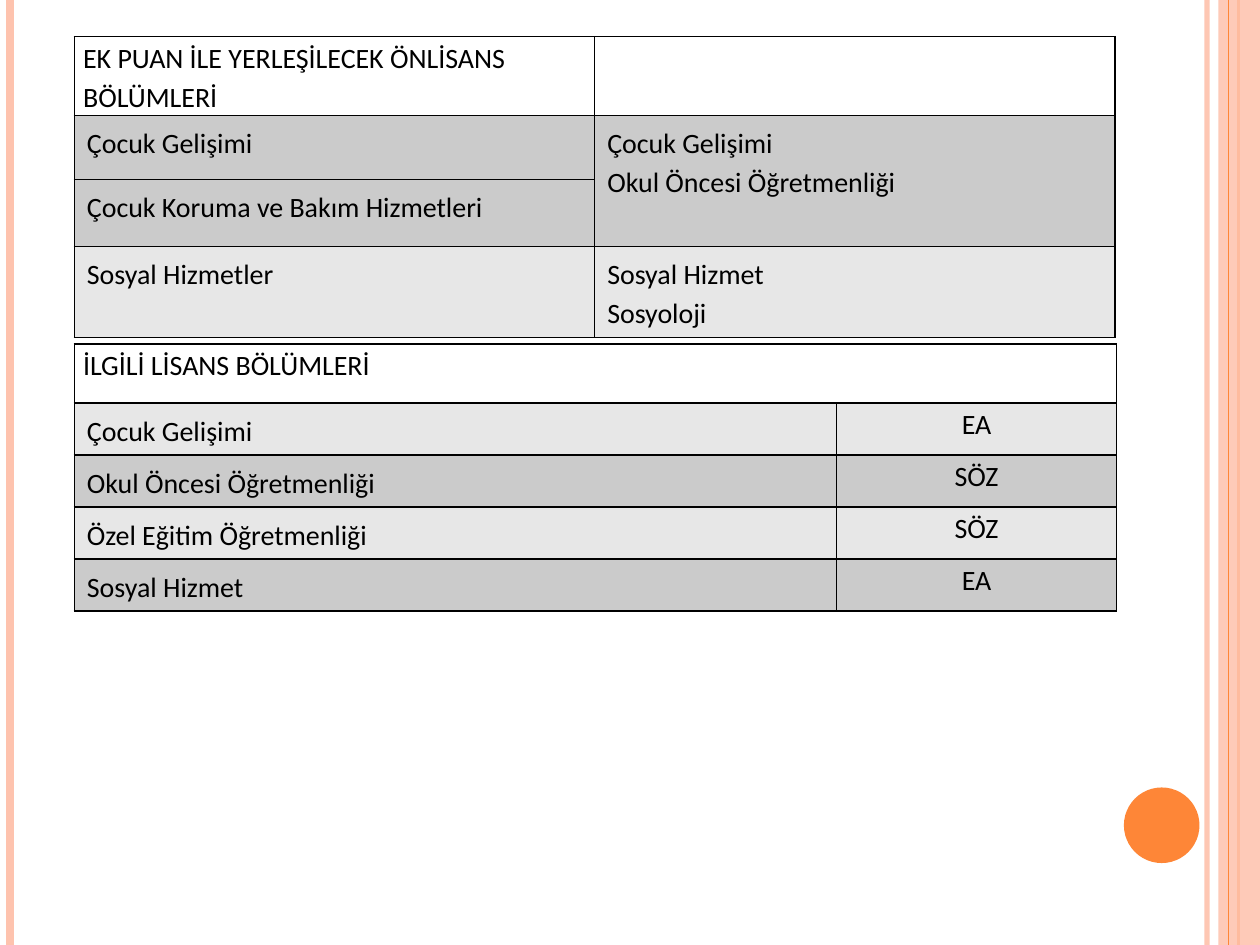
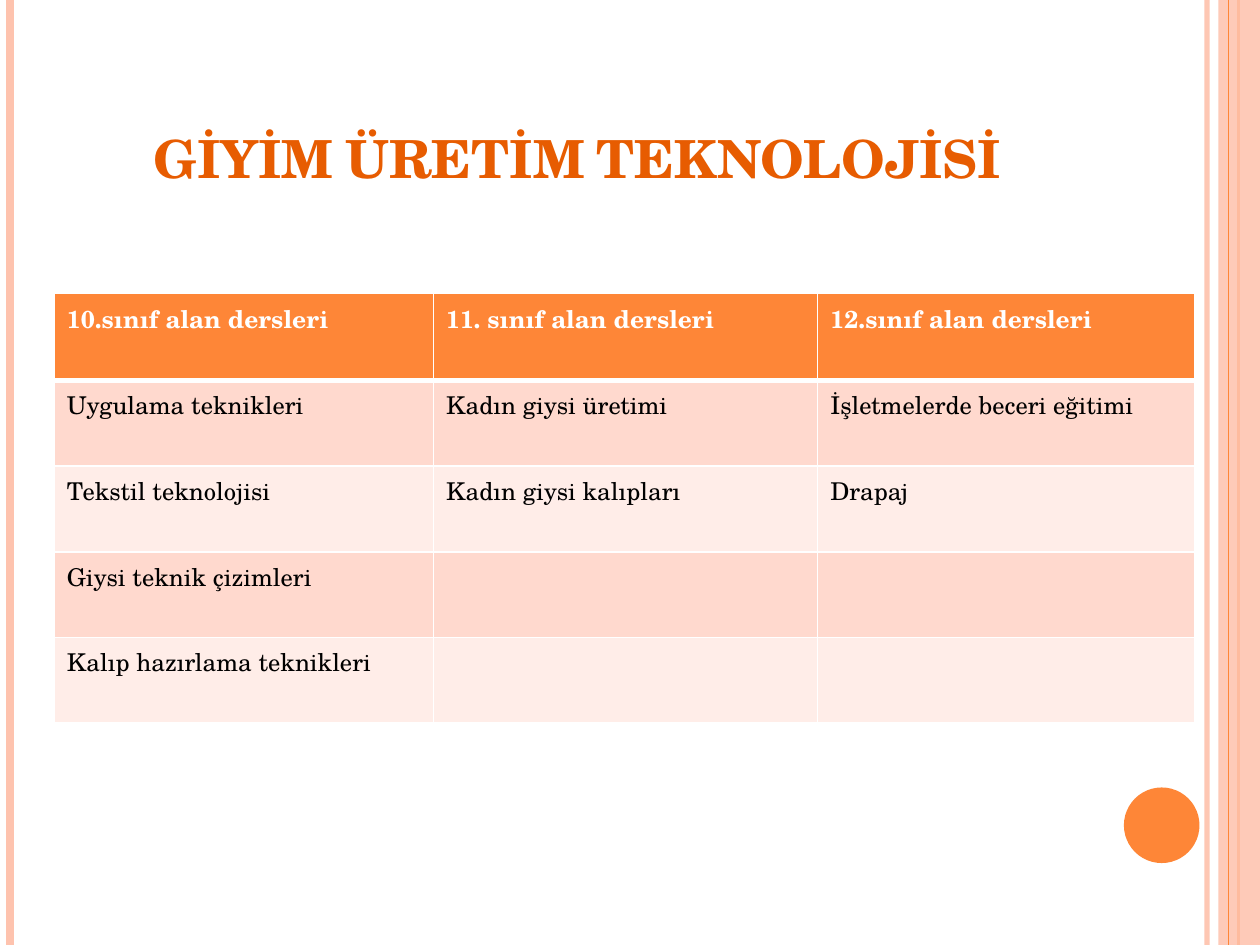
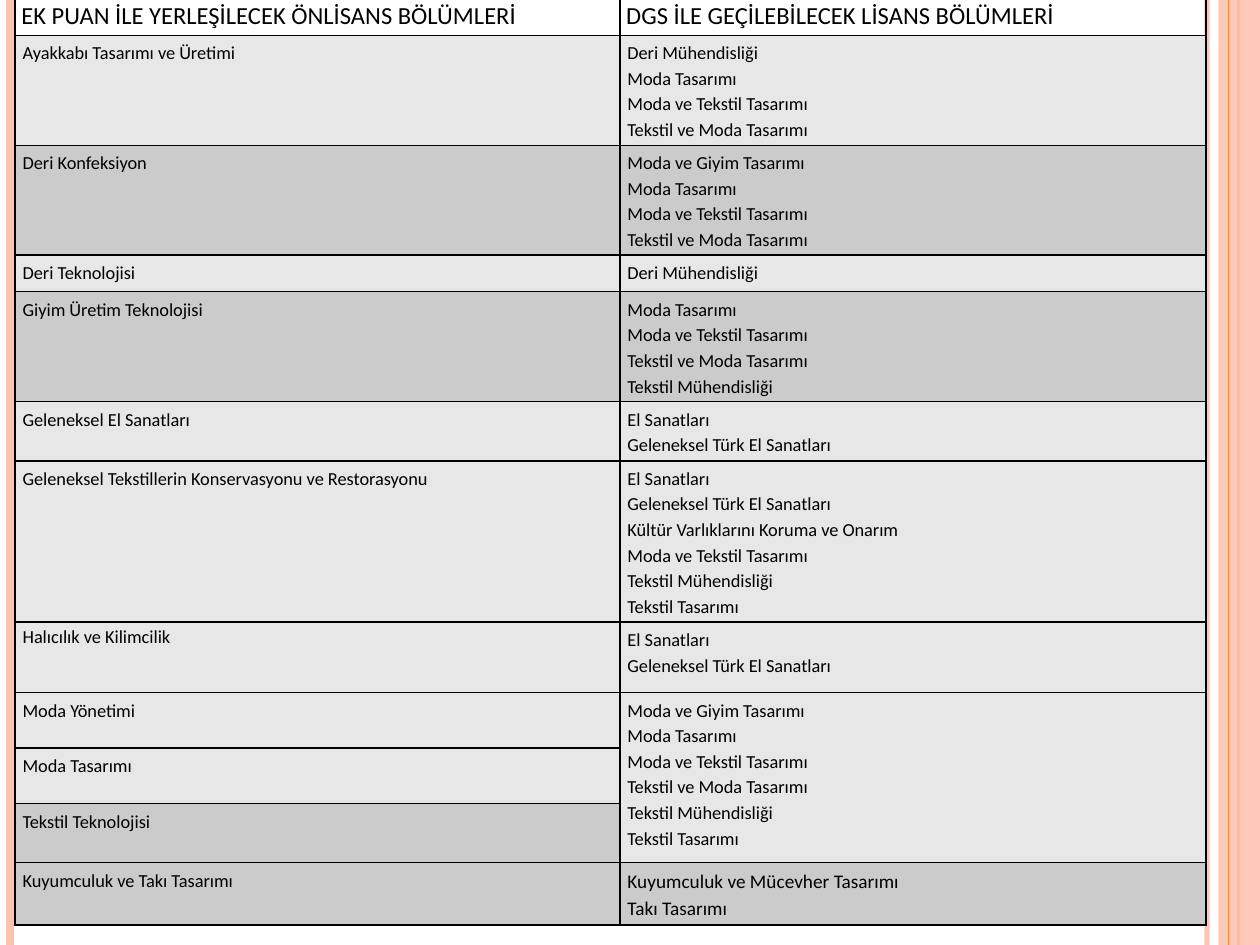
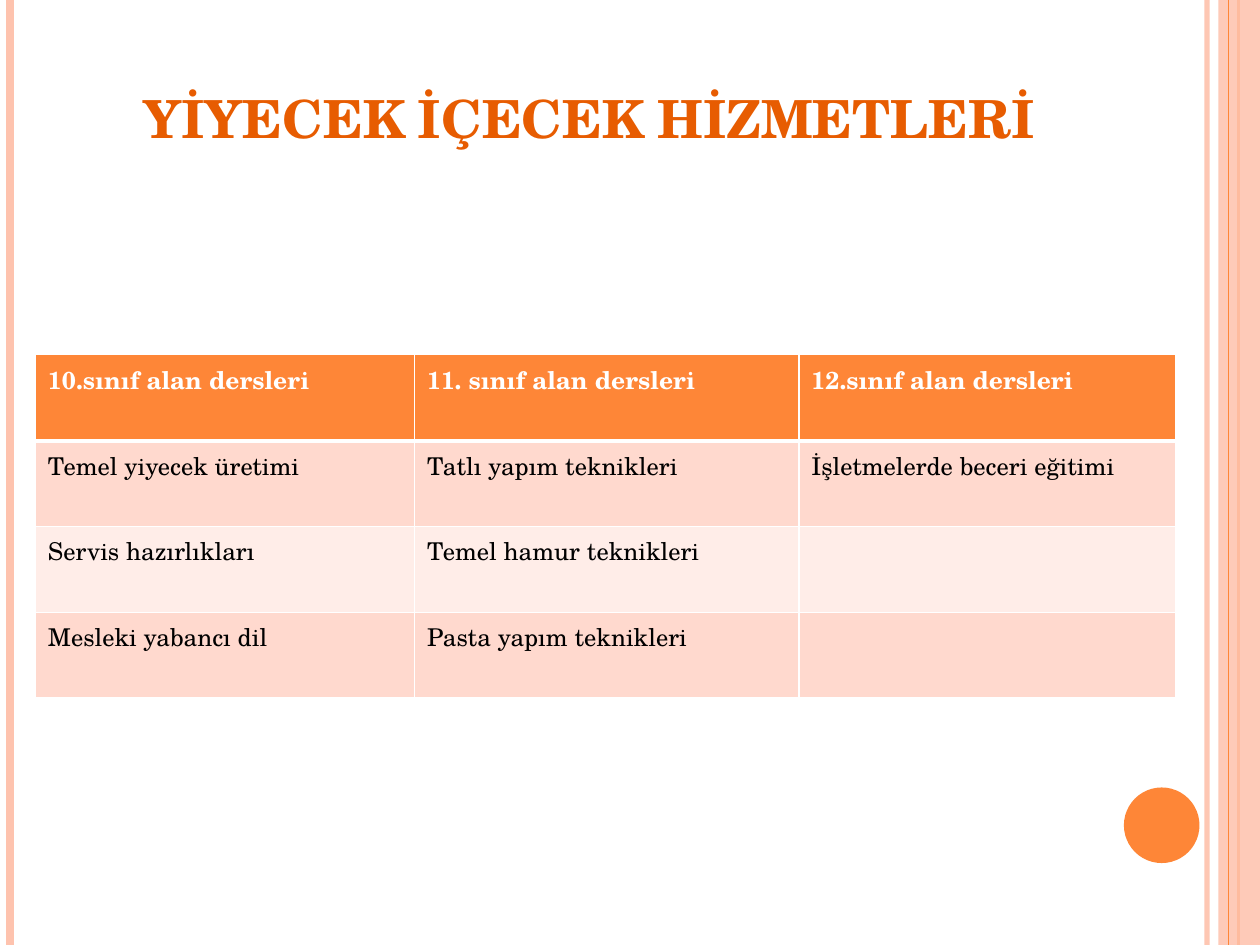
from lxml.etree import SubElement
from pptx import Presentation
from pptx.dml.color import RGBColor
from pptx.enum.shapes import MSO_CONNECTOR, MSO_SHAPE
from pptx.enum.text import MSO_ANCHOR, PP_ALIGN
from pptx.oxml.ns import qn
from pptx.util import Inches, Pt

INK = {
    "peach": "FEC3AE", "orange": "FE8637", "title": "E75C01",
    "black": "000000", "white": "FFFFFF", "dark": "CBCBCB",
    "light": "E7E7E7", "rose": "FFD9CE", "pale": "FFEDE8",
}
RGB = {name: RGBColor.from_string(code) for name, code in INK.items()}
SERIF, SANS = "TeX Gyre Schola", "Calibri"


def border(cell, sides, color, width):
    """Draw the named sides (L, R, T, B) of a cell, ahead of its fill."""
    props = cell._tc.get_or_add_tcPr()
    for spot, side in enumerate(sides):
        for old in props.findall(qn(f"a:ln{side}")):
            props.remove(old)
        line = SubElement(props, qn(f"a:ln{side}"), w=str(Pt(width)))
        solid = SubElement(line, qn("a:solidFill"))
        SubElement(solid, qn("a:srgbClr"), val=INK[color])
        props.insert(spot if len(sides) > 1 else "LRTB".index(side), line)


def grid(slide, left, top, cols, rows, texts, fills, font, size, edge, gap):
    """Add a table; a fill of None leaves the row clear."""
    frame = slide.shapes.add_table(
        len(rows), len(cols), Inches(left), Inches(top),
        Inches(sum(cols)), Inches(sum(rows)))
    table = frame.table
    table.first_row = table.horz_banding = False
    for col, width in zip(table.columns, cols):
        col.width = Inches(width)
    for row, height, line, fill in zip(table.rows, rows, texts, fills):
        row.height = Inches(height)
        for cell, text in zip(row.cells, line):
            if fill:
                cell.fill.solid()
                cell.fill.fore_color.rgb = RGB[fill]
            else:
                cell.fill.background()
            border(cell, "LRTB", edge, 1)
            cell.text_frame.text = text
            for para in cell.text_frame.paragraphs:
                para.line_spacing = gap
                for run in para.runs:
                    run.font.name = font
                    run.font.size = Pt(size)
                    run.font.color.rgb = RGB["black"]
    return table


deck = Presentation()
deck.slide_width, deck.slide_height = Inches(10), Inches(7.5)
slides = [deck.slides.add_slide(deck.slide_layouts[6]) for _ in range(4)]

# Shared side bands and corner disc
RULES = [(9.58, "peach", 3), (0.08, "peach", 4.5),
         (9.83, "orange", 1.5), (9.75, "orange", 0.75)]
SHAPES = [(MSO_SHAPE.RECTANGLE, 9.67, 0, 0.33, 7.5, "peach"),
          (MSO_SHAPE.OVAL, 8.92, 6.25, 0.6, 0.6, "orange")]
for slide in slides:
    rules, forms = [], []
    for x, color, width in RULES:
        rule = slide.shapes.add_connector(
            MSO_CONNECTOR.STRAIGHT, Inches(x), 0, Inches(x), Inches(7.5))
        rule.line.color.rgb = RGB[color]
        rule.line.width = Pt(width)
        SubElement(rule._element.spPr, qn("a:effectLst"))
        rules.append(rule)
    for kind, *box, color in SHAPES:
        form = slide.shapes.add_shape(kind, *map(Inches, box))
        form.shadow.inherit = False
        form.fill.solid()
        form.fill.fore_color.rgb = RGB[color]
        form.line.fill.background()
        forms.append(form)
    # The finest rule lies over the band
    forms[0]._element.addnext(rules[3]._element)
    for form, alpha in ((rules[0], 93), (forms[0], 87)):
        tone = next(form._element.spPr.iter(qn("a:srgbClr")))
        SubElement(tone, qn("a:alpha"), val=str(alpha * 1000))

# Slide 1: child development, associate and bachelor programmes
top = grid(
    slides[0], 0.59, 0.29, [4.13, 4.13], [0.62, 0.51, 0.53, 0.72],
    [("EK PUAN İLE YERLEŞİLECEK ÖNLİSANS BÖLÜMLERİ", ""),
     ("Çocuk Gelişimi", "Çocuk Gelişimi\nOkul Öncesi Öğretmenliği"),
     ("Çocuk Koruma ve Bakım Hizmetleri", ""),
     ("Sosyal Hizmetler", "Sosyal Hizmet\nSosyoloji")],
    [None, "dark", "dark", "light"], SANS, 16, "black", 1.15)
top.cell(1, 1).merge(top.cell(2, 1))

low = grid(
    slides[0], 0.59, 2.73, [6.05, 2.22], [0.47] + [0.41] * 4,
    [("İLGİLİ LİSANS BÖLÜMLERİ", ""),
     ("Çocuk Gelişimi", "EA"),
     ("Okul Öncesi Öğretmenliği", "SÖZ"),
     ("Özel Eğitim Öğretmenliği", "SÖZ"),
     ("Sosyal Hizmet", "EA")],
    [None] + ["light", "dark"] * 2, SANS, 16, "black", 1.15)
low.cell(0, 0).merge(low.cell(0, 1))
for table in (top, low):
    head = table.cell(0, 0)
    head.margin_left = head.margin_right = Inches(0.07)
    head.margin_top = head.margin_bottom = 0
for r in range(1, 5):
    cell = low.cell(r, 1)
    cell.margin_left = cell.margin_right = 0
    cell.margin_top = cell.margin_bottom = 0
    cell.text_frame.paragraphs[0].alignment = PP_ALIGN.CENTER

# Slides 2 and 4: title over the lessons of three school years
YEARS = ("10.sınıf alan dersleri", "11. sınıf alan dersleri",
         "12.sınıf alan dersleri")
LESSONS = [
    (slides[1], "GİYİM ÜRETİM TEKNOLOJİSİ", (0.5, 0.3, 8.17, 1.25), 0.43, 2.33,
     [("Uygulama teknikleri", "Kadın giysi üretimi",
       "İşletmelerde beceri eğitimi"),
      ("Tekstil teknolojisi", "Kadın giysi kalıpları", "Drapaj"),
      ("Giysi teknik çizimleri", "", ""),
      ("Kalıp hazırlama teknikleri", "", "")]),
    (slides[3], "YİYECEK İÇECEK HİZMETLERİ", (0.59, 0.21, 8.17, 1.02), 0.28, 2.81,
     [("Temel yiyecek üretimi", "Tatlı yapım teknikleri",
       "İşletmelerde beceri eğitimi"),
      ("Servis hazırlıkları", "Temel hamur teknikleri", ""),
      ("Mesleki yabancı dil", "Pasta yapım teknikleri", "")]),
]
for slide, name, box, x, y, rows in LESSONS:
    frame = slide.shapes.add_textbox(*map(Inches, box)).text_frame
    frame.word_wrap = True
    frame.vertical_anchor = MSO_ANCHOR.BOTTOM
    frame.text = name
    para = frame.paragraphs[0]
    para.alignment = PP_ALIGN.CENTER
    font = para.runs[0].font
    font.name, font.size, font.bold = SERIF, Pt(30), True
    font.color.rgb = RGB["title"]
    font._element.set("cap", "small")

    count = len(rows)
    table = grid(
        slide, x, y, [3.01, 3.05, 2.99], [0.69] + [0.68] * count,
        [YEARS] + rows, ["orange"] + (["rose", "pale"] * 2)[:count],
        SERIF, 14, "white", 1)
    for c in range(3):
        head = table.cell(0, c)
        font = head.text_frame.paragraphs[0].runs[0].font
        font.bold = True
        font.color.rgb = RGB["white"]
        border(head, "B", "white", 3)
        border(table.cell(1, c), "T", "white", 3)

# Slide 3: clothing, associate programmes and transfer options
FASHION = "Moda Tasarımı\nModa ve Tekstil Tasarımı\nTekstil ve Moda Tasarımı"
CRAFT = "El Sanatları\nGeleneksel Türk El Sanatları"
MILL = "Tekstil Mühendisliği"
PATHS = [
    ("EK PUAN İLE YERLEŞİLECEK ÖNLİSANS BÖLÜMLERİ",
     "DGS İLE GEÇİLEBİLECEK LİSANS BÖLÜMLERİ", 0.31, None),
    ("Ayakkabı Tasarımı ve Üretimi", f"Deri Mühendisliği\n{FASHION}",
     0.87, "light"),
    ("Deri Konfeksiyon", f"Moda ve Giyim Tasarımı\n{FASHION}", 0.87, "dark"),
    ("Deri Teknolojisi", "Deri Mühendisliği", 0.29, "light"),
    ("Giyim Üretim Teknolojisi", f"{FASHION}\n{MILL}", 0.87, "dark"),
    ("Geleneksel El Sanatları", CRAFT, 0.47, "light"),
    ("Geleneksel Tekstillerin Konservasyonu ve Restorasyonu",
     f"{CRAFT}\nKültür Varlıklarını Koruma ve Onarım\n"
     f"Moda ve Tekstil Tasarımı\n{MILL}\nTekstil Tasarımı", 1.28, "light"),
    ("Halıcılık ve Kilimcilik", CRAFT, 0.56, "light"),
    ("Moda Yönetimi",
     f"Moda ve Giyim Tasarımı\n{FASHION}\n{MILL}\nTekstil Tasarımı",
     0.44, "light"),
    ("Moda Tasarımı", "", 0.44, "light"),
    ("Tekstil Teknolojisi", "", 0.47, "dark"),
    ("Kuyumculuk ve Takı Tasarımı",
     "Kuyumculuk ve Mücevher Tasarımı\nTakı Tasarımı", 0.49, "dark"),
]
table = grid(
    slides[2], 0.12, -0.03, [4.8, 4.65], [row[2] for row in PATHS],
    [row[:2] for row in PATHS], [row[3] for row in PATHS],
    SANS, 10.5, "black", 1.15)
for r in range(len(PATHS)):
    for c in range(2):
        cell = table.cell(r, c)
        cell.margin_left = cell.margin_right = Inches(0.06 if r else 0.05)
        cell.margin_top = cell.margin_bottom = Inches(0.03 if r else 0)
for cell, size in ((table.cell(0, 0), 14), (table.cell(0, 1), 14),
                   (table.cell(11, 1), 11)):
    for para in cell.text_frame.paragraphs:
        para.runs[0].font.size = Pt(size)
table.cell(7, 0).text_frame.paragraphs[0].line_spacing = 1
table.cell(8, 1).merge(table.cell(10, 1))

deck.save("out.pptx")
